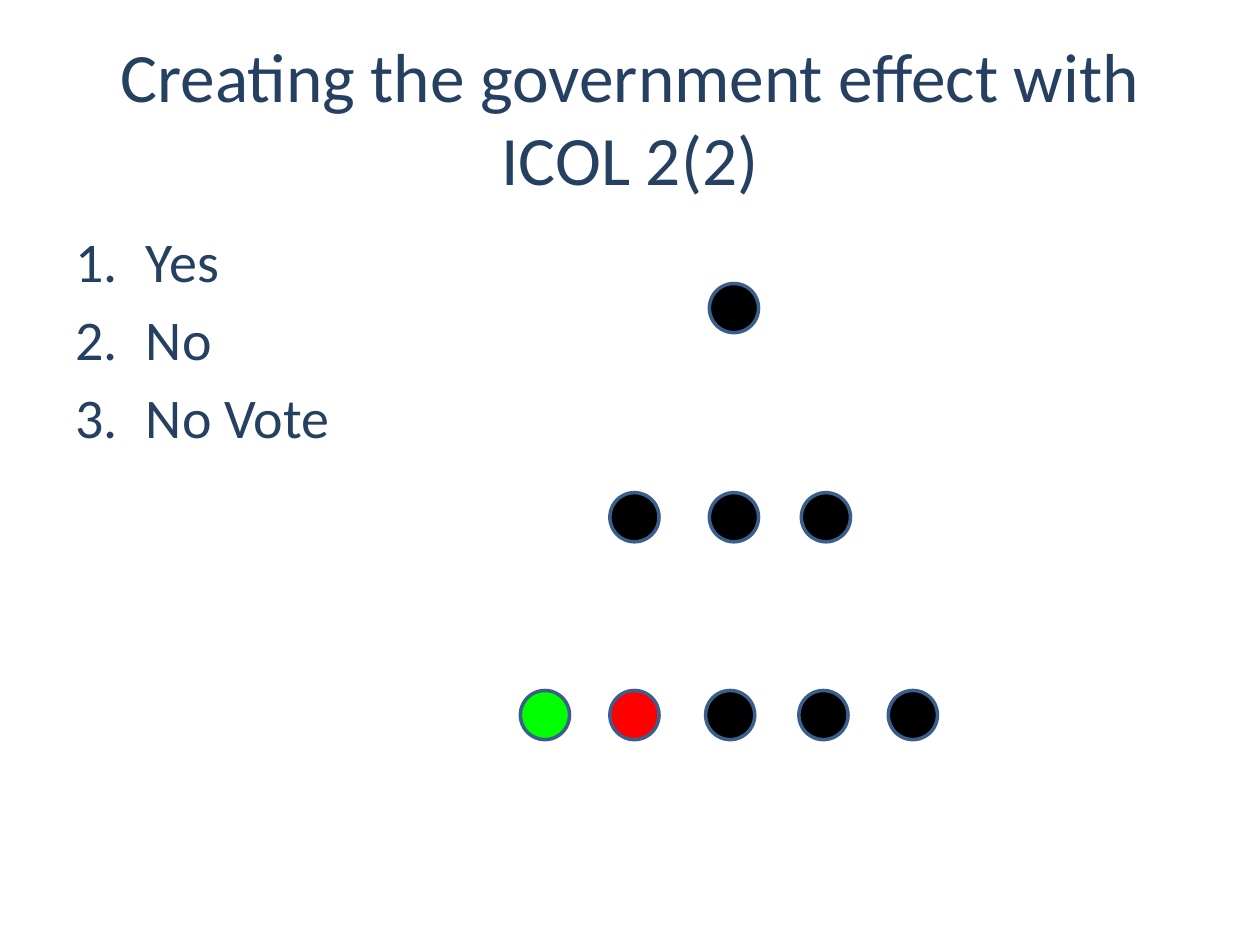
"""Build the ICOL 2(2) slide: a title, numbered answers and rows of dots."""
from dataclasses import dataclass

from pptx import Presentation
from pptx.dml.color import RGBColor
from pptx.enum.shapes import MSO_SHAPE
from pptx.enum.text import MSO_ANCHOR, PP_ALIGN
from pptx.oxml.ns import qn
from pptx.util import Inches, Pt
from lxml.etree import SubElement


@dataclass(frozen=True)
class Theme:
    """Font, type sizes and colours of the slide."""
    font: str = "Calibri"
    title_size: float = 39.6
    body_size: float = 32
    text: str = "254061"
    outline: str = "3A5F8C"
    black: str = "000000"
    green: str = "00FF00"
    red: str = "FF0000"


THEME = Theme()
DOT_SIZE = 0.39
ANSWERS = ["Yes", "No", "No Vote"]
DOT_ROWS = [
    (2.25, [(5.63, THEME.black)]),
    (3.91, [(4.84, THEME.black), (5.63, THEME.black), (6.36, THEME.black)]),
    (5.48, [(4.13, THEME.green), (4.84, THEME.red), (5.6, THEME.black),
            (6.34, THEME.black), (7.05, THEME.black)]),
]


def add_text_frame(slide, left, top, width, height):
    """Add a wrapping text box and return its text frame."""
    sp = slide.shapes.add_textbox(Inches(left), Inches(top), Inches(width), Inches(height))
    sp.text_frame.word_wrap = True
    return sp.text_frame


def add_run(p, text, size):
    """Add one run in the theme's font and text colour."""
    r = p.add_run()
    r.text = text
    r.font.name = THEME.font
    r.font.size = Pt(size)
    r.font.color.rgb = RGBColor.from_string(THEME.text)


def add_title(slide, text):
    """Add the centred title."""
    tf = add_text_frame(slide, 0.5, 0.3, 9, 1.25)
    tf.vertical_anchor = MSO_ANCHOR.MIDDLE
    p = tf.paragraphs[0]
    p.alignment = PP_ALIGN.CENTER
    add_run(p, text, THEME.title_size)


def add_numbered_list(slide, items):
    """Add an automatically numbered list."""
    tf = add_text_frame(slide, 0.5, 1.75, 4.42, 4.95)
    for i, item in enumerate(items):
        p = tf.add_paragraph() if i else tf.paragraphs[0]
        if i:
            p.space_before = Pt(6)
        pPr = p._p.get_or_add_pPr()
        pPr.set("marL", str(Inches(0.56)))
        pPr.set("indent", str(-Inches(0.56)))
        SubElement(pPr, qn("a:buFont"), typeface="+mj-lt")
        SubElement(pPr, qn("a:buAutoNum"), type="arabicPeriod")
        add_run(p, item, THEME.body_size)


def add_dot(slide, left, top, color):
    """Add one outlined dot."""
    sp = slide.shapes.add_shape(MSO_SHAPE.OVAL, Inches(left), Inches(top),
                                Inches(DOT_SIZE), Inches(DOT_SIZE))
    sp.shadow.inherit = False
    sp.fill.solid()
    sp.fill.fore_color.rgb = RGBColor.from_string(color)
    sp.line.color.rgb = RGBColor.from_string(THEME.outline)
    sp.line.width = Pt(2)


def main():
    """Build and save the slide."""
    prs = Presentation()
    prs.slide_width, prs.slide_height = Inches(10), Inches(7.5)
    s = prs.slides.add_slide(prs.slide_layouts[6])
    add_title(s, "Creating the government effect with ICOL 2(2)")
    add_numbered_list(s, ANSWERS)
    for top, dots in DOT_ROWS:
        for left, color in dots:
            add_dot(s, left, top, color)
    prs.save("out.pptx")


if __name__ == "__main__":
    main()
